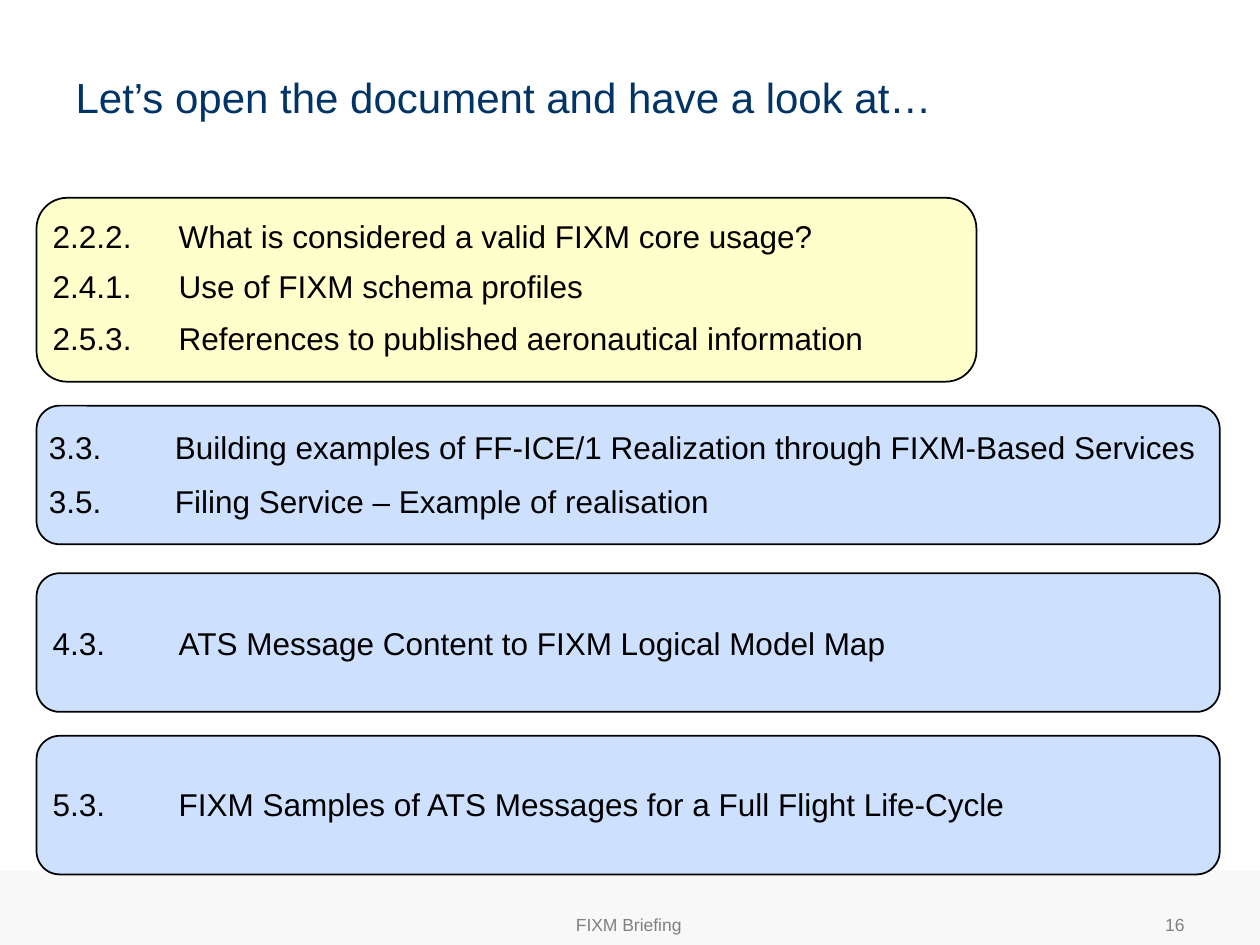
import pptx
import pptx.util
import pptx.dml.color
import pptx.enum.shapes
import pptx.enum.text
import pptx.oxml
import pptx.oxml.ns

COLORS = {
    "band": "F8F8F8",
    "blue": "CDE1FF",
    "yellow": "FFFFCC",
    "outline": "000000",
    "body": "000000",
    "title": "003366",
    "footer": "808080",
}
ALIGN = pptx.enum.text.PP_ALIGN
ANCHOR = pptx.enum.text.MSO_ANCHOR
FIT = pptx.enum.text.MSO_AUTO_SIZE
SHAPE = pptx.enum.shapes.MSO_SHAPE

deck = pptx.Presentation()
deck.slide_width = pptx.util.Inches(10)
deck.slide_height = pptx.util.Inches(7.5)
column = deck.slide_width / 100
row = deck.slide_height / 75
slide = deck.slides.add_slide(deck.slide_layouts[5])


def area(left, top, width, height):
    return int(left * column), int(top * row), int(width * column), int(height * row)


def write(frame, text, size=18, color="body", align=ALIGN.LEFT,
          anchor=ANCHOR.TOP, fit=FIT.NONE, tab=None):
    frame.word_wrap = True
    frame.auto_size = fit
    frame.vertical_anchor = anchor
    paragraph = frame.paragraphs[0]
    paragraph.alignment = align
    if tab:
        stops = pptx.oxml.parse_xml(
            f'<a:tabLst {pptx.oxml.ns.nsdecls("a")}>'
            f'<a:tab pos="{int(tab * column)}" algn="l"/></a:tabLst>')
        paragraph._p.get_or_add_pPr().append(stops)
    run = paragraph.add_run()
    run.text = text
    run.font.name = "Arial"
    run.font.size = pptx.util.Pt(size)
    run.font.color.rgb = pptx.dml.color.RGBColor.from_string(COLORS[color])


title = slide.shapes.title
title.left, title.top, title.width, title.height = area(5, 5.2, 74.8, 8.5)
write(title.text_frame, "Let’s open the document and have a look at…", size=24, color="title")

panels = [
    (SHAPE.RECTANGLE, "band", 0, 69.1, 100, 5.9),
    (SHAPE.ROUNDED_RECTANGLE, "blue", 2.9, 58.4, 93.9, 11),
    (SHAPE.ROUNDED_RECTANGLE, "blue", 2.9, 45.5, 93.9, 11),
    (SHAPE.ROUNDED_RECTANGLE, "blue", 2.9, 32.2, 93.9, 11),
    (SHAPE.ROUNDED_RECTANGLE, "yellow", 2.9, 15.7, 74.6, 14.6),
]
for outline, color, *place in panels:
    panel = slide.shapes.add_shape(outline, *area(*place))
    panel.shadow.inherit = False
    panel.fill.solid()
    panel.fill.fore_color.rgb = pptx.dml.color.RGBColor.from_string(COLORS[color])
    if color == "band":
        panel.line.fill.background()
    else:
        panel.line.color.rgb = pptx.dml.color.RGBColor.from_string(COLORS["outline"])
        panel.line.width = pptx.util.Pt(1)

sections = [
    ("2.2.2.", "What is considered a valid FIXM core usage?", 3.2, 16.7, 62.8),
    ("2.4.1.", "Use of FIXM schema profiles", 3.2, 20.7, 45.2),
    ("2.5.3.", "References to published aeronautical information", 3.2, 24.8, 72.1),
    ("3.3.", "Building examples of FF-ICE/1 Realization through FIXM-Based Services", 2.9, 33.5, 96.8),
    ("3.5.", "Filing Service – Example of realisation", 2.9, 37.8, 83.9),
    ("4.3.", "ATS Message Content to FIXM Logical Model Map", 3.2, 49, 81.8),
    ("5.3.", "FIXM Samples of ATS Messages for a Full Flight Life-Cycle", 3.2, 61.8, 93.9),
]
for number, heading, left, top, width in sections:
    entry = slide.shapes.add_textbox(*area(left, top, width, 4))
    write(entry.text_frame, f"{number}\t{heading}", fit=FIT.SHAPE_TO_FIT_TEXT, tab=10)

for text, left, width, align in [
    ("FIXM Briefing", 27.1, 45.6, ALIGN.CENTER),
    ("16", 89.8, 5.2, ALIGN.RIGHT),
]:
    footer = slide.shapes.add_textbox(*area(left, 71.9, width, 3))
    write(footer.text_frame, text, size=10, color="footer", align=align, anchor=ANCHOR.MIDDLE)

deck.save("out.pptx")
